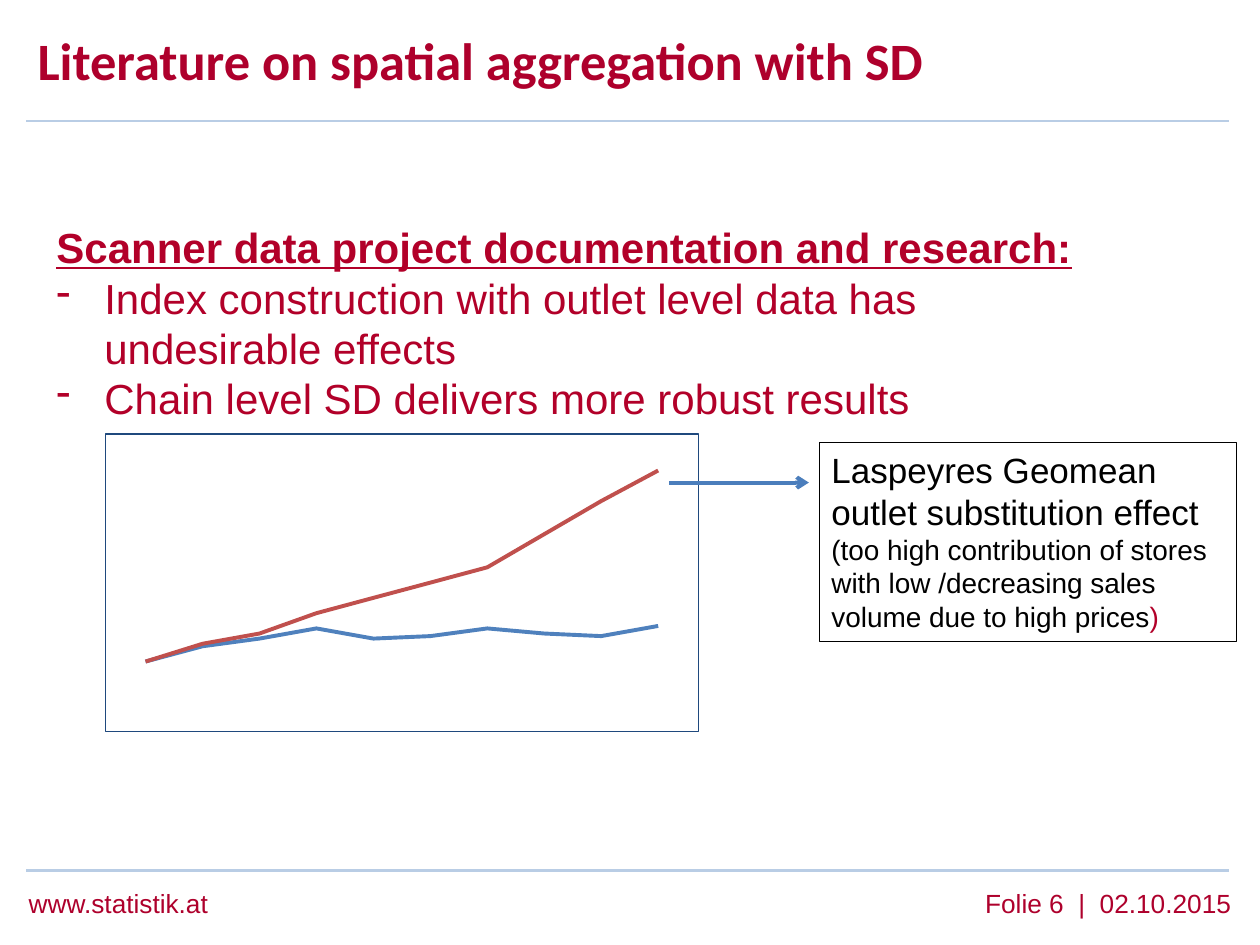
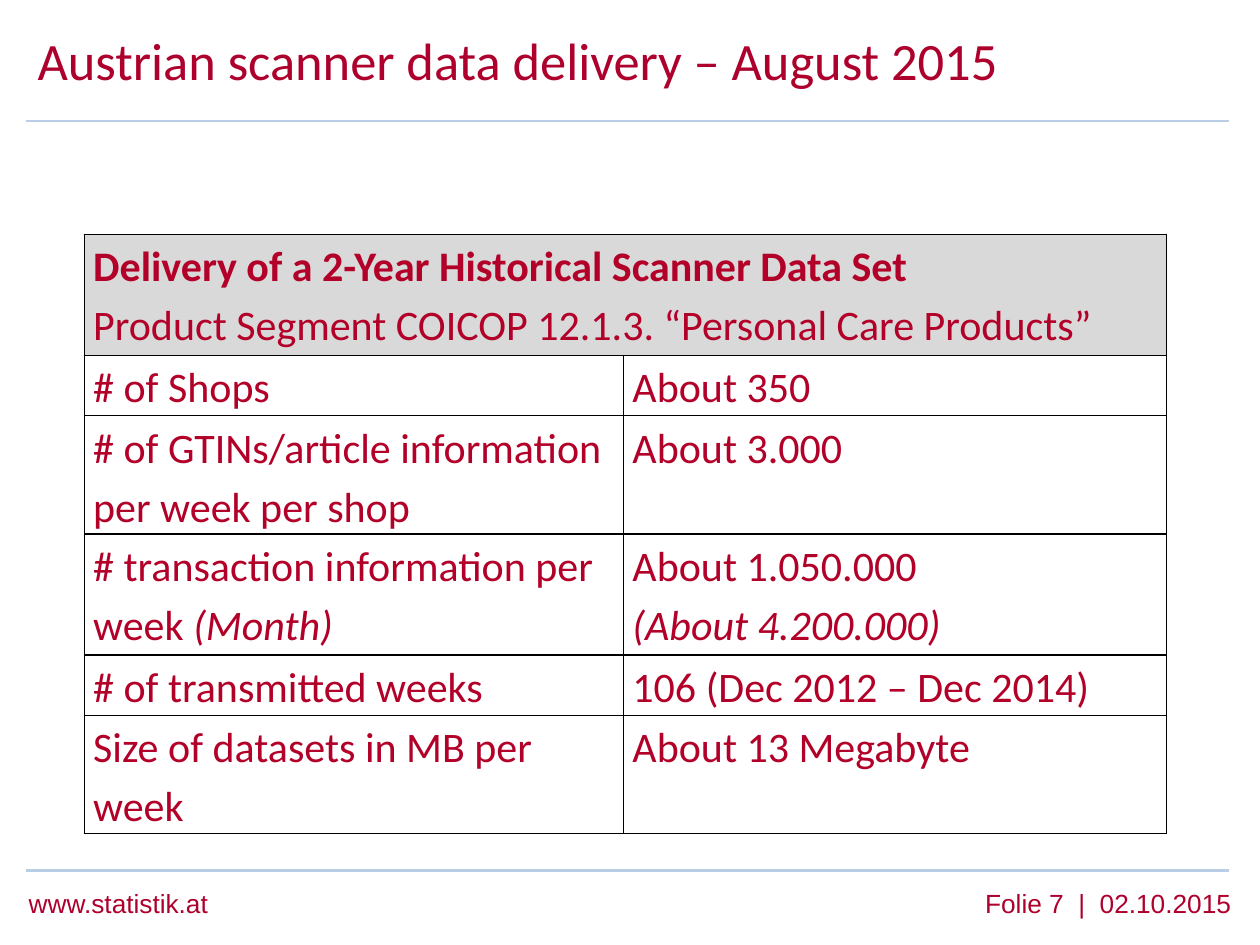
from dataclasses import dataclass
from lxml.etree import SubElement
from pptx import Presentation
from pptx.chart.data import CategoryChartData
from pptx.dml.color import RGBColor
from pptx.enum.chart import XL_CHART_TYPE as ChartType
from pptx.enum.shapes import MSO_CONNECTOR as Connector, MSO_SHAPE as Shape
from pptx.enum.text import MSO_ANCHOR as Anchor, PP_ALIGN as Align
from pptx.oxml import parse_xml
from pptx.oxml.ns import nsdecls, qn
from pptx.util import Inches, Pt


@dataclass(frozen=True)
class Theme:
    heading_font: str = "Calibri"
    body_font: str = "Arial"
    title_color: str = "AE002C"
    body_color: str = "B20029"
    rule_color: str = "B9CDE5"
    ink: str = "000000"
    header_fill: str = "D9D9D9"
    chart_border: str = "1F497D"
    arrow_color: str = "4B7EBC"
    title_size: int = 30
    body_size: int = 24
    callout_size: int = 20
    note_size: int = 16
    footer_size: int = 15
    chart_size: int = 10


THEME = Theme()
SLIDE_WIDTH, SLIDE_HEIGHT = Inches(10), Inches(7.5)

# Content: a paragraph is a list of (text, style letters) runs
SITE = "www.statistik.at"
FOOTER = "Folie {}  |  02.10.2015"
FIRST_NUMBER = 6

LITERATURE_TITLE = [("Literature on spatial aggregation with SD", "b")]
FINDINGS = [
    [("Scanner data project documentation and research:", "bu")],
    [("Index construction with outlet level data has undesirable effects", "")],
    [("Chain level SD delivers more robust results", "")],
]
CALLOUT = [("Laspeyres Geomean\voutlet substitution effect", "")]
CALLOUT_NOTE = [
    ("(too high contribution of stores with low /decreasing sales "
     "volume due to high prices", ""),
    (")", ""),
]
INDEX_SERIES = [
    ("Series 1", "4F81BD", (25, 31, 34, 38, 34, 35, 38, 36, 35, 39)),
    ("Series 2", "C0504D", (25, 32, 36, 44, 50, 56, 62, 75, 88, 100)),
]

DELIVERY_TITLE = [("Austrian scanner data delivery – August 2015", "")]
DELIVERY_HEADER = [
    [("Delivery of a 2-Year Historical Scanner Data Set", "b")],
    [("Product Segment COICOP 12.1.3. “Personal Care Products”", "")],
]
DELIVERY_ROWS = [
    ([[("# of Shops", "")]], [[("About 350", "")]]),
    ([[("# of GTINs/article information per week per shop", "")]],
     [[("About 3.000", "")]]),
    ([[("# transaction information per week ", ""), ("(Month)", "i")]],
     [[("About 1.050.000", "")], [("(About 4.200.000)", "i")]]),
    ([[("# of transmitted weeks", "")]], [[("106 (Dec 2012 – Dec 2014)", "")]]),
    ([[("Size of datasets in MB per week", "")]], [[("About 13 Megabyte", "")]]),
]

# Places: left, top, width, height in percent of the slide
TITLE_BOX = (2, 3.33, 80, 7.07)
SITE_BOX = (1.3, 93.2, 22.7, 4.67)
NUMBER_BOX = (62.5, 93.2, 36.2, 4.67)
RULE_LEFT, RULE_RIGHT = 2.1, 97.5
RULE_TOPS = (12.8, 92.13)
FINDINGS_BOX = (3.5, 22.8, 85, 28.2)
CHART_BOX = (8.3, 45.87, 47.2, 31.6)
ARROW_LEFT, ARROW_RIGHT, ARROW_TOP = 53.1, 64.2, 51.07
CALLOUT_BOX = (65, 46.8, 33.1, 21.07)
TABLE_LEFT, TABLE_TOP = 6.7, 24.8
TABLE_COLUMNS = (42.8, 43.1)
TABLE_ROWS = (12.8, 6.4, 12.5, 12.8, 6.4, 12.5)


def across(percent):
    return round(SLIDE_WIDTH * percent / 100)


def down(percent):
    return round(SLIDE_HEIGHT * percent / 100)


def place(box):
    left, top, width, height = box
    return across(left), down(top), across(width), down(height)


def rgb(color):
    return RGBColor.from_string(color)


def set_style(font, style):
    if style:
        font.bold = "b" in style
        font.italic = "i" in style
        font.underline = "u" in style


def write_paragraph(paragraph, runs, font, size, color):
    if len(runs) == 1:
        paragraph.text, style = runs[0]
        set_style(paragraph.font, style)
    else:
        for text, style in runs:
            run = paragraph.add_run()
            run.text = text
            set_style(run.font, style)
    paragraph.font.name, paragraph.font.size = font, Pt(size)
    paragraph.font.color.rgb = rgb(color)


def paragraphs_for(frame, count):
    return [frame.paragraphs[0]] + [frame.add_paragraph() for _ in range(count - 1)]


def add_text(slide, box, runs, font, size, color):
    frame = slide.shapes.add_textbox(*place(box)).text_frame
    frame.word_wrap = True
    write_paragraph(frame.paragraphs[0], runs, font, size, color)
    return frame


def add_line(slide, left, right, top, color, width):
    line = slide.shapes.add_connector(
        Connector.STRAIGHT, across(left), down(top), across(right), down(top))
    line.line.color.rgb, line.line.width = rgb(color), Pt(width)
    SubElement(line._element.spPr, qn("a:effectLst"))
    return line


def add_base_slide(presentation, title):
    """Slide with its title, both rules and the footer."""
    slide = presentation.slides.add_slide(presentation.slide_layouts[6])
    number = FIRST_NUMBER + len(presentation.slides) - 1
    for top in RULE_TOPS:
        add_line(slide, RULE_LEFT, RULE_RIGHT, top, THEME.rule_color, 1.5)
    footer_type = (THEME.body_font, THEME.footer_size, THEME.title_color)
    add_text(slide, SITE_BOX, [(SITE, "")], *footer_type)
    frame = add_text(slide, NUMBER_BOX, [(FOOTER.format(number), "")], *footer_type)
    frame.paragraphs[0].alignment = Align.RIGHT
    frame = add_text(slide, TITLE_BOX, title,
                     THEME.heading_font, THEME.title_size, THEME.title_color)
    frame.vertical_anchor = Anchor.MIDDLE
    frame.paragraphs[0].line_spacing = Pt(THEME.title_size)
    return slide


def add_findings(slide):
    frame = slide.shapes.add_textbox(*place(FINDINGS_BOX)).text_frame
    frame.word_wrap = True
    for index, paragraph in enumerate(paragraphs_for(frame, len(FINDINGS))):
        properties = paragraph._p.get_or_add_pPr()
        properties.set("marL", str(Inches(0.38)))
        properties.set("indent", str(-Inches(0.38)))
        if index:
            SubElement(properties, qn("a:buChar"), char="-")
        write_paragraph(paragraph, FINDINGS[index],
                        THEME.body_font, THEME.body_size, THEME.body_color)


def add_index_chart(slide):
    data = CategoryChartData()
    data.categories = [str(number) for number in range(1, 11)]
    for name, _, values in INDEX_SERIES:
        data.add_series(name, values)
    chart = slide.shapes.add_chart(ChartType.LINE, *place(CHART_BOX), data).chart
    chart.has_legend = chart.has_title = False
    chart.font.name, chart.font.size = THEME.heading_font, Pt(THEME.chart_size)
    chart.font.color.rgb = rgb(THEME.ink)
    chart.value_axis.has_major_gridlines = False
    chart.value_axis.minimum_scale, chart.value_axis.maximum_scale = 0, 112
    chart.category_axis.visible = chart.value_axis.visible = False
    plot = chart.plots[0]
    plot.vary_by_categories = False
    for series, (_, color, _) in zip(plot.series, INDEX_SERIES):
        series.smooth = False
        series.format.line.color.rgb, series.format.line.width = rgb(color), Pt(2.25)

    # Plot area filling the frame, and the frame's border
    plot_area = chart._chartSpace.chart.plotArea
    for layout in plot_area.findall(qn("c:layout")):
        plot_area.remove(layout)
    plot_area.insert(0, parse_xml(
        f'<c:layout {nsdecls("c")}><c:manualLayout><c:layoutTarget val="inner"/>'
        '<c:xMode val="edge"/><c:yMode val="edge"/><c:x val="0.02"/><c:y val="0.02"/>'
        '<c:w val="0.96"/><c:h val="0.96"/></c:manualLayout></c:layout>'))
    chart._chartSpace.chart.addnext(parse_xml(
        f'<c:spPr {nsdecls("c", "a")}><a:noFill/><a:ln w="{Pt(0.75)}"><a:solidFill>'
        f'<a:srgbClr val="{THEME.chart_border}"/></a:solidFill></a:ln></c:spPr>'))


def add_callout(slide):
    arrow = add_line(slide, ARROW_LEFT, ARROW_RIGHT, ARROW_TOP, THEME.arrow_color, 2.25)
    SubElement(arrow.line._get_or_add_ln(), qn("a:tailEnd"), type="arrow")

    callout = slide.shapes.add_shape(Shape.RECTANGLE, *place(CALLOUT_BOX))
    callout.shadow.inherit = False
    callout.fill.background()
    callout.line.color.rgb, callout.line.width = rgb(THEME.ink), Pt(0.25)
    frame = callout.text_frame
    frame.word_wrap, frame.vertical_anchor = True, Anchor.TOP
    heading, note = paragraphs_for(frame, 2)
    write_paragraph(heading, CALLOUT, THEME.body_font, THEME.callout_size, THEME.ink)
    write_paragraph(note, CALLOUT_NOTE, THEME.body_font, THEME.note_size, THEME.ink)
    for run, color in zip(note.runs, (THEME.ink, THEME.body_color)):
        run.font.color.rgb = rgb(color)
    heading.alignment = note.alignment = Align.LEFT


def format_cell(cell):
    cell.margin_left = cell.margin_right = Inches(0.07)
    cell.margin_top = cell.margin_bottom = 0
    properties = cell._tc.get_or_add_tcPr()
    for side in ("lnL", "lnR", "lnT", "lnB"):
        properties.append(parse_xml(
            f'<a:{side} {nsdecls("a")} w="{Pt(1)}"><a:solidFill>'
            f'<a:srgbClr val="{THEME.ink}"/></a:solidFill></a:{side}>'))
    cell.fill.background()


def write_cell(cell, content):
    for paragraph, runs in zip(paragraphs_for(cell.text_frame, len(content)), content):
        write_paragraph(paragraph, runs,
                        THEME.heading_font, THEME.body_size, THEME.body_color)
        paragraph.line_spacing = 1.15


def add_delivery_table(slide):
    box = (TABLE_LEFT, TABLE_TOP, sum(TABLE_COLUMNS), sum(TABLE_ROWS))
    table = slide.shapes.add_table(
        len(TABLE_ROWS), len(TABLE_COLUMNS), *place(box)).table
    table.first_row = table.horz_banding = False
    for column, width in zip(table.columns, TABLE_COLUMNS):
        column.width = across(width)
    for row, height in zip(table.rows, TABLE_ROWS):
        row.height = down(height)
    for cell in table.iter_cells():
        format_cell(cell)
    header = table.cell(0, 0)
    header.merge(table.cell(0, 1))
    header.fill.solid()
    header.fill.fore_color.rgb = rgb(THEME.header_fill)
    write_cell(header, DELIVERY_HEADER)
    for row_index, row in enumerate(DELIVERY_ROWS, start=1):
        for column_index, content in enumerate(row):
            write_cell(table.cell(row_index, column_index), content)


def main():
    presentation = Presentation()
    presentation.slide_width, presentation.slide_height = SLIDE_WIDTH, SLIDE_HEIGHT

    # Literature
    slide = add_base_slide(presentation, LITERATURE_TITLE)
    add_findings(slide)
    add_index_chart(slide)
    add_callout(slide)

    # Data delivery
    slide = add_base_slide(presentation, DELIVERY_TITLE)
    add_delivery_table(slide)

    presentation.save("out.pptx")


if __name__ == "__main__":
    main()
